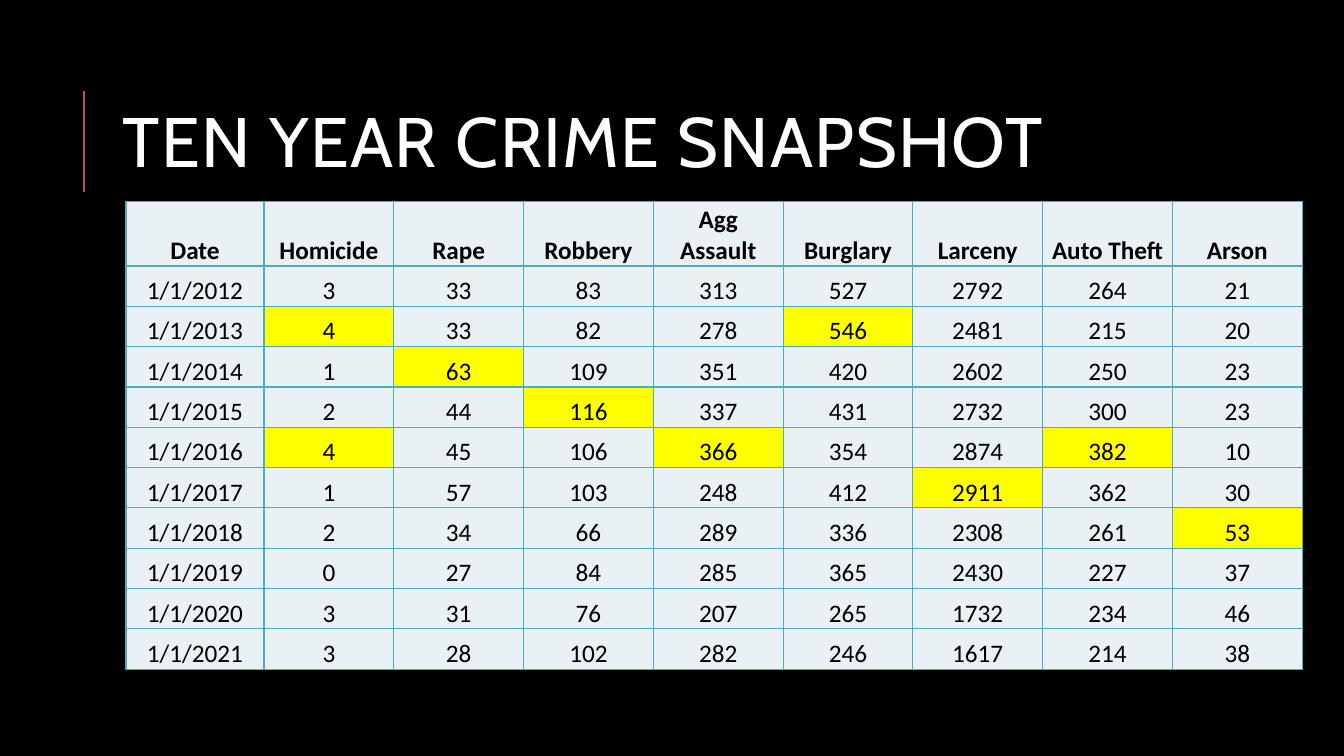
from dataclasses import dataclass

from lxml.etree import SubElement
from pptx import Presentation
from pptx.dml.color import RGBColor
from pptx.enum.shapes import MSO_CONNECTOR
from pptx.enum.text import MSO_ANCHOR, PP_ALIGN
from pptx.oxml import parse_xml
from pptx.oxml.ns import nsdecls, qn
from pptx.slide import Slide
from pptx.table import _Cell
from pptx.util import Pt

COLORS = {
    "background": "000000",
    "title": "FFFFFF",
    "accent": "C0504D",
    "border": "4BACC6",
    "cell": "E9F1F5",
    "peak": "FFFF00",
    "text": "000000",
}
HEADERS = ["Date", "Homicide", "Rape", "Robbery", "Agg Assault",
           "Burglary", "Larceny", "Auto Theft", "Arson"]
TABLE_LEFT, TABLE_TOP = 90, 144
DATE_WIDTH, CRIME_WIDTH = 98.6, 92.7
HEADER_HEIGHT, YEAR_HEIGHT = 46, 28.8


@dataclass(frozen=True)
class YearRecord:
    year: int
    counts: tuple[int, ...]


RECORDS = [
    YearRecord(2012, (3, 33, 83, 313, 527, 2792, 264, 21)),
    YearRecord(2013, (4, 33, 82, 278, 546, 2481, 215, 20)),
    YearRecord(2014, (1, 63, 109, 351, 420, 2602, 250, 23)),
    YearRecord(2015, (2, 44, 116, 337, 431, 2732, 300, 23)),
    YearRecord(2016, (4, 45, 106, 366, 354, 2874, 382, 10)),
    YearRecord(2017, (1, 57, 103, 248, 412, 2911, 362, 30)),
    YearRecord(2018, (2, 34, 66, 289, 336, 2308, 261, 53)),
    YearRecord(2019, (0, 27, 84, 285, 365, 2430, 227, 37)),
    YearRecord(2020, (3, 31, 76, 207, 265, 1732, 234, 46)),
    YearRecord(2021, (3, 28, 102, 282, 246, 1617, 214, 38)),
]


def rgb(name: str) -> RGBColor:
    return RGBColor.from_string(COLORS[name])


def add_accent_line(slide: Slide) -> None:
    line = slide.shapes.add_connector(
        MSO_CONNECTOR.STRAIGHT, Pt(60), Pt(136.8), Pt(60), Pt(64.8))
    line.line.color.rgb = rgb("accent")
    line.line.width = Pt(1.5)
    SubElement(line._element.spPr, qn("a:effectLst"))


def add_title(slide: Slide, text: str) -> None:
    title = slide.shapes.add_textbox(Pt(80.6), Pt(46), Pt(765.4), Pt(118))
    frame = title.text_frame
    frame.word_wrap = True
    frame.vertical_anchor = MSO_ANCHOR.MIDDLE
    frame.text = text
    paragraph = frame.paragraphs[0]
    paragraph.line_spacing = 0.8
    run = paragraph.runs[0]
    run.font.name = "Cabin"
    run.font.size = Pt(50)
    run.font.color.rgb = rgb("title")
    run._r.get_or_add_rPr().set("spc", "100")


def add_borders(cell: _Cell) -> None:
    properties = cell._tc.get_or_add_tcPr()
    for position, side in enumerate(("lnL", "lnR", "lnT", "lnB")):
        border = parse_xml(
            f'<a:{side} {nsdecls("a")} w="{Pt(1)}"><a:solidFill>'
            f'<a:srgbClr val="{COLORS["border"]}"/></a:solidFill></a:{side}>')
        properties.insert(position, border)


def fill_cell(cell: _Cell, text: str, fill: str, bold: bool) -> None:
    cell.text_frame.text = text
    cell.vertical_anchor = MSO_ANCHOR.BOTTOM
    cell.margin_left = cell.margin_right = Pt(5)
    cell.margin_top = cell.margin_bottom = Pt(0)
    cell.fill.solid()
    cell.fill.fore_color.rgb = rgb(fill)
    paragraph = cell.text_frame.paragraphs[0]
    paragraph.alignment = PP_ALIGN.CENTER
    font = paragraph.runs[0].font
    font.name = "Calibri"
    font.size = Pt(18)
    font.bold = bold
    font.color.rgb = rgb("text")
    add_borders(cell)


def add_crime_table(slide: Slide, records: list[YearRecord]) -> None:
    """Draw one row per year and highlight the highest count of each crime."""
    widths = [DATE_WIDTH] + [CRIME_WIDTH] * (len(HEADERS) - 1)
    heights = [HEADER_HEIGHT] + [YEAR_HEIGHT] * len(records)
    table = slide.shapes.add_table(
        len(heights), len(widths), Pt(TABLE_LEFT), Pt(TABLE_TOP),
        Pt(sum(widths)), Pt(sum(heights))).table
    for column, width in zip(table.columns, widths):
        column.width = Pt(width)
    for row, height in zip(table.rows, heights):
        row.height = Pt(height)

    for column, header in enumerate(HEADERS):
        fill_cell(table.cell(0, column), header, "cell", True)
    peaks = [max(counts) for counts in zip(*(record.counts for record in records))]
    for row, record in enumerate(records, start=1):
        fill_cell(table.cell(row, 0), f"1/1/{record.year}", "cell", False)
        for column, (count, peak) in enumerate(zip(record.counts, peaks), start=1):
            fill = "peak" if count == peak else "cell"
            fill_cell(table.cell(row, column), str(count), fill, False)


def main() -> None:
    presentation = Presentation()
    presentation.slide_width = Pt(960)
    presentation.slide_height = Pt(540)
    slide = presentation.slides.add_slide(presentation.slide_layouts[6])
    slide.background.fill.solid()
    slide.background.fill.fore_color.rgb = rgb("background")
    add_accent_line(slide)
    add_title(slide, "TEN YEAR CRIME SNAPSHOT")
    add_crime_table(slide, RECORDS)
    presentation.save("out.pptx")


if __name__ == "__main__":
    main()
